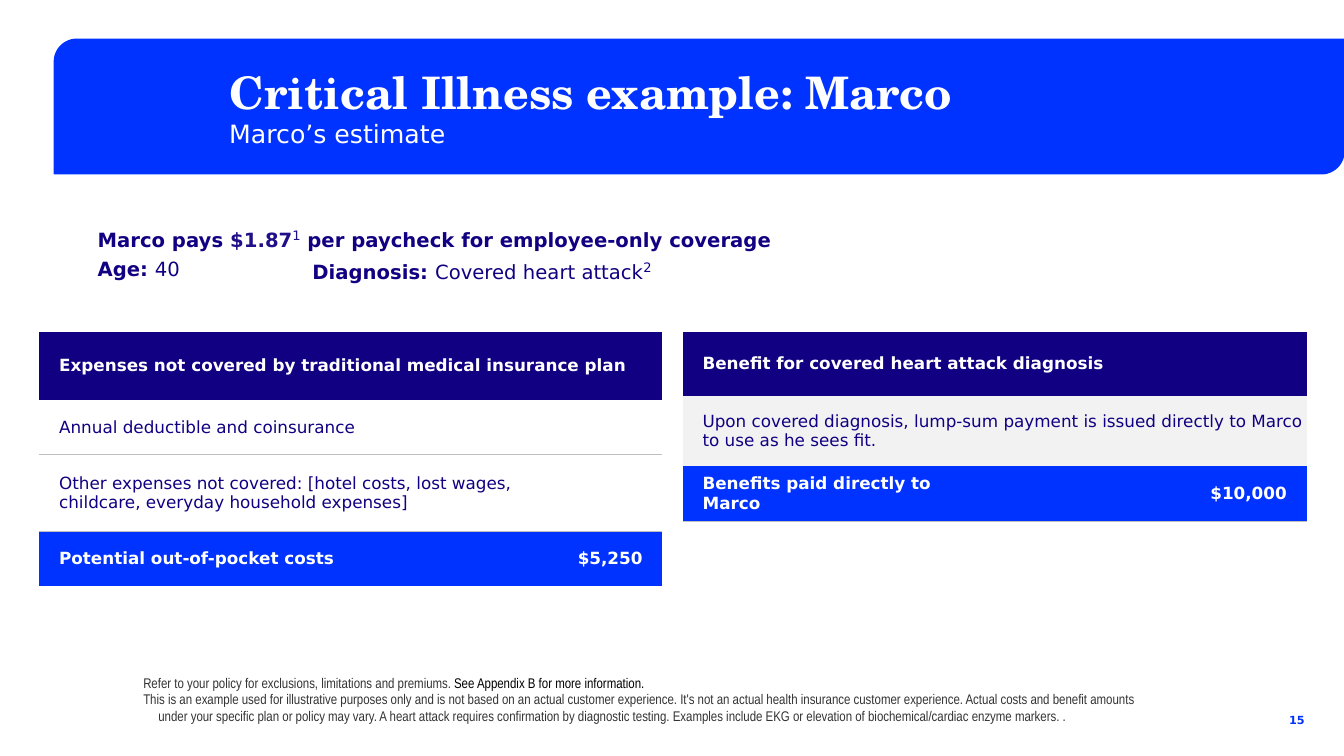
from lxml import etree
from pptx import Presentation
from pptx.dml.color import RGBColor
from pptx.enum.shapes import MSO_SHAPE
from pptx.enum.text import MSO_ANCHOR, PP_ALIGN
from pptx.oxml.ns import qn
from pptx.util import Cm, Pt

BANNER_SHAPE = MSO_SHAPE.ROUND_2_DIAG_RECTANGLE
MIDDLE, BOTTOM = MSO_ANCHOR.MIDDLE, MSO_ANCHOR.BOTTOM
LEFT, RIGHT = PP_ALIGN.LEFT, PP_ALIGN.RIGHT
NO_STYLE = "{2D5ABB26-0587-4C30-8999-92F81FD0307C}"
COLORS = {
    "navy": "110081", "price": "1F0F88", "blue": "0033FF", "white": "FFFFFF",
    "pale": "F2F2F2", "rule": "BFBFBF", "text": "333333", "black": "000000",
}


def rgb(name):
    return RGBColor.from_string(COLORS[name])


def add_text(paragraph, text, size=14, color="navy", bold=False,
             font="DejaVu Sans", superscript=False):
    run = paragraph.add_run()
    run.text = text
    run.font.size = Pt(size)
    run.font.name = font
    run.font.bold = bold
    run.font.color.rgb = rgb(color)
    if superscript:
        run.font._element.set("baseline", "30000")


presentation = Presentation()
presentation.slide_width, presentation.slide_height = Cm(33.86), Cm(19.05)
slide = presentation.slides.add_slide(presentation.slide_layouts[6])

# Marco's details: position, then runs of text with their format
bold = {"bold": True}
raised = {"size": 16, "superscript": True}
details = [
    (2.46, 5.54, 30, [
        ("Marco pays ", bold), ("$1.87", {"bold": True, "color": "price"}),
        ("1", {**raised, "color": "price"}),
        (" per paycheck for employee-only coverage", bold)]),
    (2.46, 6.35, 5, [("Age: ", bold), ("40", {})]),
    (7.87, 6.35, 12.88, [("Diagnosis: ", bold), ("Covered heart attack", {}), ("2", raised)]),
]
for left, top, width, runs in details:
    frame = slide.shapes.add_textbox(Cm(left), Cm(top), Cm(width), Cm(1.02)).text_frame
    frame.word_wrap = True
    frame.margin_left = 0
    paragraph = frame.paragraphs[0]
    paragraph.space_after = Pt(6)
    for text, style in runs:
        add_text(paragraph, text, **style)

# Title banner
banner = slide.shapes.add_shape(BANNER_SHAPE, Cm(1.37), Cm(0.99), Cm(32.49), Cm(3.39))
banner.shadow.inherit = False
banner.fill.solid()
banner.fill.fore_color.rgb = rgb("blue")
banner.line.color.rgb = rgb("blue")
banner.line.width = Pt(1)

title = slide.shapes.add_shape(BANNER_SHAPE, Cm(5.36), Cm(0.99), Cm(28.14), Cm(3.4))
title.shadow.inherit = False
title.fill.background()
title.line.fill.background()
frame = title.text_frame
frame.vertical_anchor = MIDDLE
heading, subtitle = frame.paragraphs[0], frame.add_paragraph()
heading.alignment = subtitle.alignment = LEFT
add_text(heading, "Critical Illness example: Marco", size=32, color="white",
         bold=True, font="TeX Gyre Schola")
add_text(subtitle, "Marco’s estimate", size=18, color="white")

# Page number and footnotes
footnotes = [
    [("Refer to your policy for exclusions, limitations and premiums. ", "text"),
     ("See Appendix B for more information.", "black")],
    [("This is an example used for illustrative purposes only and is not based on an "
      "actual customer experience. It's not an actual health insurance customer "
      "experience. Actual costs and benefit amounts under your specific plan or policy "
      "may vary. A heart attack requires confirmation by diagnostic testing. Examples "
      "include EKG or elevation of biochemical/cardiac enzyme markers. .", "text")],
]
number_box = slide.shapes.add_textbox(Cm(31.88), Cm(17.81), Cm(0.99), Cm(0.51))
footnote_box = slide.shapes.add_textbox(Cm(3.61), Cm(17.4), Cm(25.25), Cm(0.86))
for box in (number_box, footnote_box):
    frame = box.text_frame
    frame.word_wrap = True
    frame.vertical_anchor = BOTTOM
    frame.margin_left = frame.margin_top = frame.margin_right = frame.margin_bottom = 0

paragraph = number_box.text_frame.paragraphs[0]
paragraph.alignment = RIGHT
add_text(paragraph, "15", size=8, color="blue", bold=True)

frame = footnote_box.text_frame
for paragraph, runs in zip((frame.paragraphs[0], frame.add_paragraph()), footnotes):
    properties = paragraph._p.get_or_add_pPr()
    properties.set("marL", str(Cm(0.38)))
    properties.set("indent", str(-Cm(0.38)))
    for text, color in runs:
        add_text(paragraph, text, size=10, color=color, font="Arial Narrow")

# Tables: each row has height, fill, top rule, bottom rule and cell texts
tables = [
    (0.99, [10.8, 4.9], [
        (1.73, "navy", None, None, ["Expenses not covered by traditional medical insurance plan"]),
        (1.37, None, None, "rule", ["Annual deductible and coinsurance"]),
        (1.93, None, "rule", None, ["Other expenses not covered: [hotel costs, lost wages,\n"
                                    "childcare, everyday household expenses]"]),
        (1.37, "blue", None, None, ["Potential out-of-pocket costs", "$5,250"])]),
    (17.2, [7.86, 7.86], [
        (1.63, "navy", None, None, ["Benefit for covered heart attack diagnosis"]),
        (1.75, "pale", None, None, ["Upon covered diagnosis, lump-sum payment is issued "
                                    "directly to Marco to use as he sees fit."]),
        (1.4, "blue", None, "rule", ["Benefits paid directly to Marco", "$10,000"])]),
]
for left, widths, rows in tables:
    height = sum(row[0] for row in rows)
    graphic = slide.shapes.add_table(len(rows), 2, Cm(left), Cm(8.36), Cm(sum(widths)), Cm(height))
    table = graphic.table
    table.first_row = table.horz_banding = False
    table._tbl.tblPr.find(qn("a:tableStyleId")).text = NO_STYLE
    for column, width in zip(table.columns, widths):
        column.width = Cm(width)
    for row_index, (height, fill, top_rule, bottom_rule, texts) in enumerate(rows):
        table.rows[row_index].height = Cm(height)
        if len(texts) == 1:
            table.cell(row_index, 0).merge(table.cell(row_index, 1))
        on_dark = fill in ("navy", "blue")
        for column_index in range(2):
            cell = table.cell(row_index, column_index)
            for tag, color in (("a:lnT", top_rule), ("a:lnB", bottom_rule)):
                if color:
                    border = etree.SubElement(cell._tc.get_or_add_tcPr(), qn(tag), w=str(Pt(1)))
                    solid = etree.SubElement(border, qn("a:solidFill"))
                    etree.SubElement(solid, qn("a:srgbClr"), val=COLORS[color])
            if fill:
                cell.fill.solid()
                cell.fill.fore_color.rgb = rgb(fill)
            else:
                cell.fill.background()
        for column_index, text in enumerate(texts):
            cell = table.cell(row_index, column_index)
            cell.vertical_anchor = MIDDLE
            cell.margin_left = Cm(0.5)
            cell.margin_right = Cm(0.5 if column_index else 0.03)
            cell.margin_top = cell.margin_bottom = Cm(0.03 if fill == "blue" else 0.2)
            for line_index, line in enumerate(text.split("\n")):
                frame = cell.text_frame
                paragraph = frame.add_paragraph() if line_index else frame.paragraphs[0]
                paragraph.alignment = RIGHT if column_index else LEFT
                add_text(paragraph, line, size=12, bold=on_dark,
                         color="white" if on_dark else "navy")

presentation.save("out.pptx")
